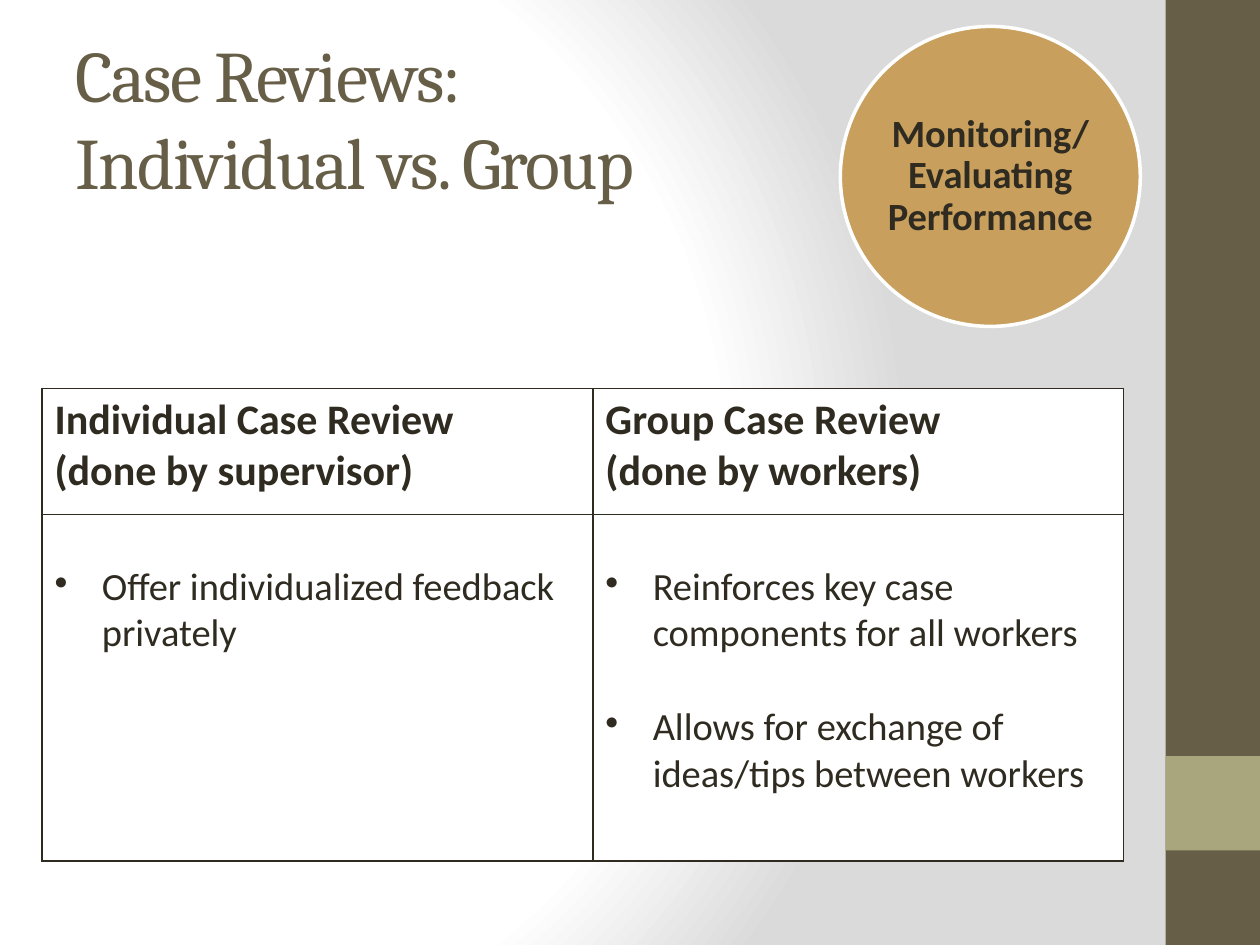
import pptx
import pptx.util
import pptx.dml.color
import pptx.enum.shapes
import pptx.enum.text
import pptx.oxml
import pptx.oxml.ns
import lxml.etree

Pt = pptx.util.Pt
RGBColor = pptx.dml.color.RGBColor
Shape = pptx.enum.shapes.MSO_SHAPE
Anchor = pptx.enum.text.MSO_ANCHOR
Align = pptx.enum.text.PP_ALIGN
qn = pptx.oxml.ns.qn

BROWN = RGBColor(0x67, 0x5E, 0x47)
OLIVE = RGBColor(0xA9, 0xA5, 0x7C)
GOLD = RGBColor(0xC8, 0x9F, 0x5D)
INK = RGBColor(0x2F, 0x2B, 0x20)
WHITE = RGBColor(0xFF, 0xFF, 0xFF)
GREY = RGBColor(0xDA, 0xDA, 0xDA)


def style(para, name, size, color, bold=False):
    font = para.font
    font.name, font.size, font.bold = name, Pt(size), bold
    font.color.rgb = color


def draw(kind, left, top, width, height, color):
    shape = slide.shapes.add_shape(kind, Pt(left), Pt(top), Pt(width), Pt(height))
    shape.shadow.inherit = False
    shape.fill.solid()
    shape.fill.fore_color.rgb = color
    shape.line.fill.background()
    return shape


deck = pptx.Presentation()
deck.slide_width, deck.slide_height = Pt(720), Pt(540)
slide = deck.slides.add_slide(deck.slide_layouts[6])

back = slide.background.fill
back.gradient()
grad = slide.background._cSld.find(".//" + qn("a:gradFill"))
stops = "".join(
    f'<a:gs pos="{pos * 1000}"><a:srgbClr val="{color}"/></a:gs>'
    for pos, color in [(0, WHITE), (75, WHITE), (100, GREY)]
)
fresh = pptx.oxml.parse_xml(
    f'<a:gradFill {pptx.oxml.ns.nsdecls("a")} rotWithShape="1"><a:gsLst>{stops}</a:gsLst>'
    '<a:path path="circle"><a:fillToRect l="20000" t="50000" r="100000" b="50000"/></a:path>'
    "</a:gradFill>"
)
grad.getparent().replace(grad, fresh)

draw(Shape.RECTANGLE, 666, 0, 54, 540, BROWN)
draw(Shape.RECTANGLE, 666, 432, 54, 54, OLIVE)

title = slide.shapes.add_textbox(Pt(36), Pt(21.6), Pt(600), Pt(90)).text_frame
title.word_wrap = True
title.vertical_anchor = Anchor.MIDDLE
title.text = "Case Reviews:\vIndividual vs. Group"
style(title.paragraphs[0], "Cambria", 41.4, BROWN)
for run in title.paragraphs[0].runs:
    run.font._element.set("spc", "-100")

heads = [
    ["Individual Case Review", "(done by supervisor)"],
    ["Group Case Review", "(done by workers)"],
]
points = [
    ["Offer individualized feedback privately"],
    [
        "Reinforces key case components for all workers",
        "Allows for exchange of ideas/tips between workers",
    ],
]
table = slide.shapes.add_table(2, 2, Pt(24), Pt(222), Pt(618), Pt(270)).table
table.first_row = table.horz_banding = False
for col, width in zip(table.columns, [314.8, 303.2]):
    col.width = Pt(width)
for row, height in zip(table.rows, [72, 198]):
    row.height = Pt(height)

for r, texts in enumerate([heads, points]):
    for c, lines in enumerate(texts):
        cell = table.cell(r, c)
        props = cell._tc.get_or_add_tcPr()
        for side in ["lnL", "lnR", "lnT", "lnB"]:
            edge = lxml.etree.SubElement(props, qn("a:" + side), w=str(Pt(1)))
            solid = lxml.etree.SubElement(edge, qn("a:solidFill"))
            lxml.etree.SubElement(solid, qn("a:srgbClr"), val=str(INK))
        cell.fill.solid()
        cell.fill.fore_color.rgb = WHITE
        cell.text = "\n".join(lines)
        if r == 1:
            cell.margin_top = Pt(28)
        for i, para in enumerate(cell.text_frame.paragraphs):
            style(para, "Calibri", [24, 22][r], INK, r == 0)
            if r == 1:
                para.space_before = Pt(26.85 if i else 0)
                ppr = para._p.get_or_add_pPr()
                ppr.set("marL", str(Pt(27)))
                ppr.set("indent", str(-Pt(27)))
                bullet = pptx.oxml.parse_xml(
                    f'<a:buChar {pptx.oxml.ns.nsdecls("a")} char="•"/>'
                )
                ppr.find(qn("a:defRPr")).addprevious(bullet)

badge = draw(Shape.OVAL, 480.2, 15.1, 171.4, 171.4, GOLD)
badge.line.color.rgb = WHITE
badge.line.width = Pt(2)
label = badge.text_frame
label.word_wrap = True
label.vertical_anchor = Anchor.MIDDLE
label.margin_left = label.margin_right = label.margin_top = label.margin_bottom = Pt(1.4)
label.text = "Monitoring/\vEvaluating Performance"
para = label.paragraphs[0]
para.alignment = Align.CENTER
para.line_spacing = 0.9
style(para, "Calibri", 22, INK, True)

deck.save("out.pptx")
